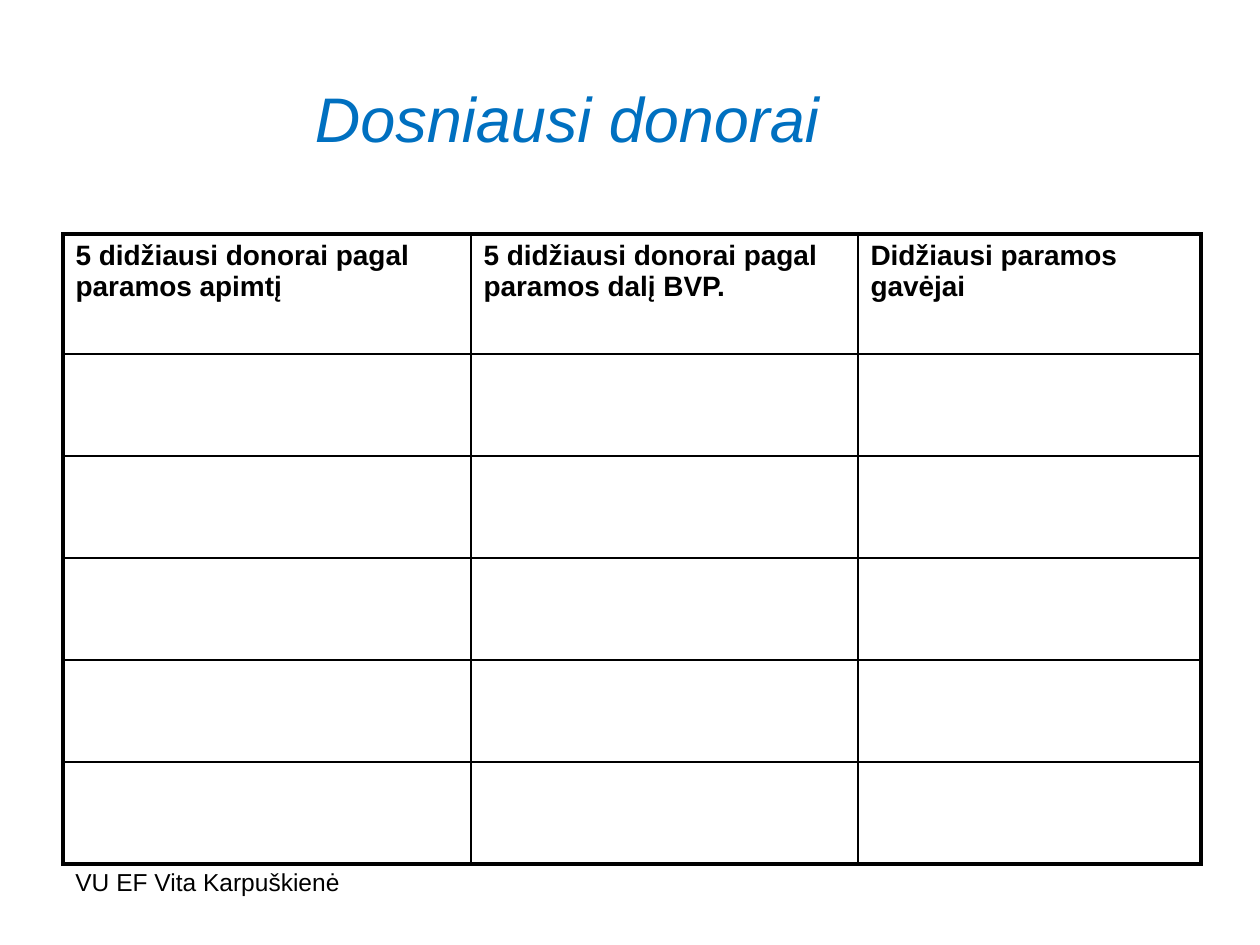
import pptx
import pptx.dml.color
import pptx.enum.text
import pptx.oxml
import pptx.oxml.ns
import pptx.util

SCALE = 914400 / 126
NS = pptx.oxml.ns.nsdecls("a")


def px(n):
    return pptx.util.Emu(round(n * SCALE))


def color(code):
    return pptx.dml.color.RGBColor.from_string(code)


class Deck:
    font = "Arial"
    ink = "000000"
    blue = "0070C0"
    thin = 1
    thick = 2.25

    def __init__(self, width, height):
        self.file = pptx.Presentation()
        self.file.slide_width = px(width)
        self.file.slide_height = px(height)
        self.slide = self.file.slides.add_slide(self.file.slide_layouts[5])

    def style(self, frame, text, size, code=ink, bold=False, italic=False):
        frame.text = text
        for part in frame.paragraphs:
            for run in part.runs:
                run.font.name = self.font
                run.font.size = pptx.util.Pt(size)
                run.font.bold = bold
                run.font.italic = italic
                run.font.color.rgb = color(code)

    def title(self, text, left, top, width, height):
        shape = self.slide.shapes.title
        shape.left, shape.top = px(left), px(top)
        shape.width, shape.height = px(width), px(height)
        frame = shape.text_frame
        self.style(frame, text, 36, self.blue, italic=True)
        frame.vertical_anchor = pptx.enum.text.MSO_ANCHOR.MIDDLE
        frame.paragraphs[0].alignment = pptx.enum.text.PP_ALIGN.CENTER

    def label(self, text, left, top, width, height):
        box = self.slide.shapes.add_textbox(px(left), px(top), px(width), px(height))
        box.text_frame.word_wrap = True
        self.style(box.text_frame, text, 14)

    def border(self, cell, outer):
        props = cell._tc.get_or_add_tcPr()
        for spot, side in enumerate("LRTB"):
            width = pptx.util.Pt(self.thick if side in outer else self.thin)
            line = pptx.oxml.parse_xml(
                f'<a:ln{side} {NS} w="{width}"><a:solidFill>'
                f'<a:srgbClr val="{self.ink}"/></a:solidFill></a:ln{side}>')
            props.insert(spot, line)

    def table(self, heads, left, top, cols, rows):
        frame = self.slide.shapes.add_table(
            len(rows), len(cols), px(left), px(top), px(sum(cols)), px(sum(rows)))
        grid = frame.table
        grid.first_row = grid.horz_banding = False
        for col, width in zip(grid.columns, cols):
            col.width = px(width)
        for row, height in zip(grid.rows, rows):
            row.height = px(height)
        for r in range(len(rows)):
            for c in range(len(cols)):
                cell = grid.cell(r, c)
                cell.fill.background()
                edges = {"L": c == 0, "R": c == len(cols) - 1,
                         "T": r == 0, "B": r == len(rows) - 1}
                self.border(cell, [side for side in edges if edges[side]])
        for c, head in enumerate(heads):
            self.style(grid.cell(0, c).text_frame, head, 16, bold=True)


def main():
    deck = Deck(1260, 945)
    deck.label("VU EF Vita Karpuškienė", 63, 861, 294, 66)
    deck.title("Dosniausi donorai", 0, 38, 1134, 158)
    heads = ["5 didžiausi donorai pagal paramos apimtį",
             "5 didžiausi donorai pagal paramos dalį BVP.",
             "Didžiausi paramos gavėjai"]
    deck.table(heads, 63, 234, [408, 387, 343], [120] + [102] * 5)
    deck.file.save("out.pptx")


if __name__ == "__main__":
    main()
